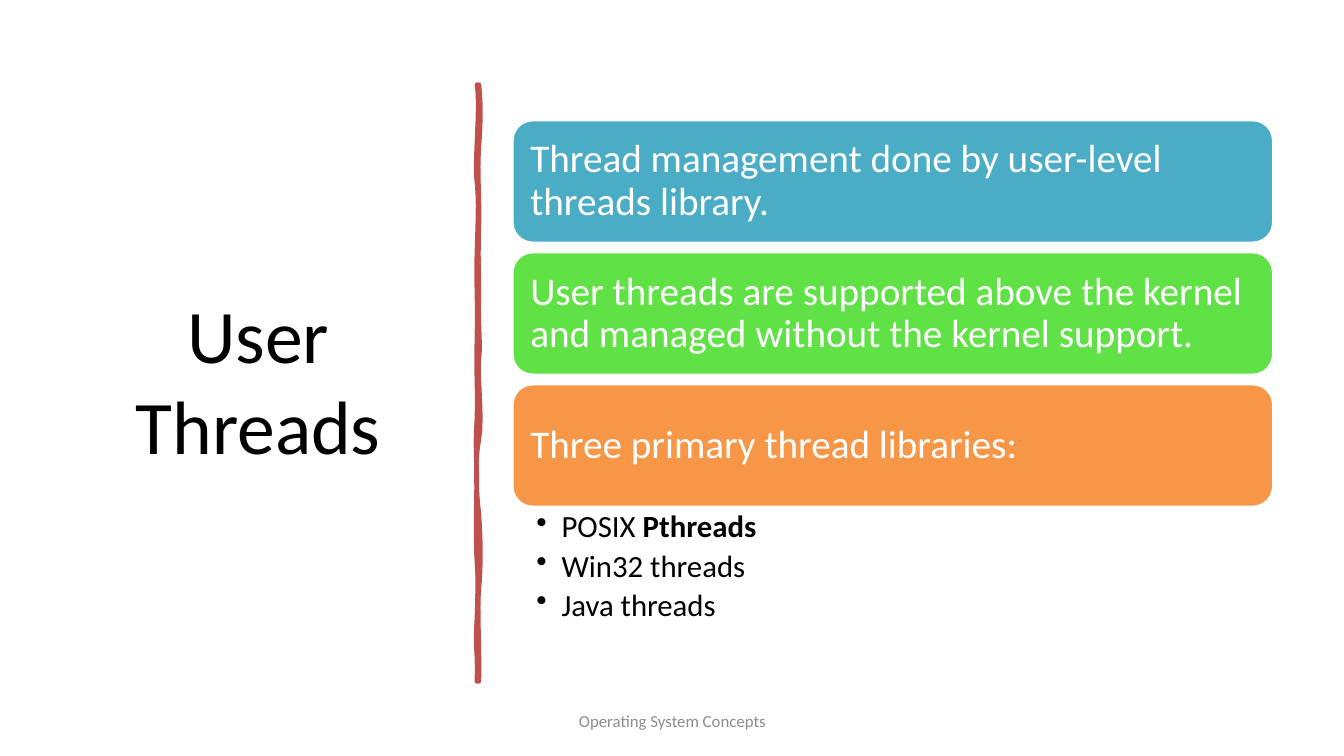
"""Build the slide on user threads with its three coloured statements."""
from lxml import etree
from pptx import Presentation, util as u
from pptx.dml.color import RGBColor
from pptx.enum import shapes, text

COLOURS = {"black": "000000", "white": "FFFFFF", "grey": "8C8C8C", "red": "C0504D",
           "blue": "4BACC6", "green": "60E146", "orange": "F79646"}


def colour(name):
    return RGBColor.from_string(COLOURS[name])


def write(box, paragraphs, size, shade="black", align=text.PP_ALIGN.LEFT,
          anchor=text.MSO_ANCHOR.MIDDLE, insets=(0.1, 0.05, 0.1, 0.05),
          spacing=1.0, after=0, bullet=None):
    frame = box.text_frame
    frame.word_wrap = True
    frame.vertical_anchor = anchor
    (frame.margin_left, frame.margin_top,
     frame.margin_right, frame.margin_bottom) = map(u.Inches, insets)
    for index, spans in enumerate(paragraphs):
        para = frame.add_paragraph() if index else frame.paragraphs[0]
        para.alignment = align
        para.line_spacing = spacing
        para.space_after = u.Pt(after)
        if bullet:
            props = para._p.get_or_add_pPr()
            props.set("marL", str(u.Inches(0.25)))
            props.set("indent", str(-u.Inches(0.25)))
            mark = etree.SubElement(props, "{http://schemas.openxmlformats.org/drawingml/2006/main}buChar")
            mark.set("char", bullet)
        for words, bold in spans:
            span = para.add_run()
            span.text = words
            span.font.name = "Calibri"
            span.font.size = u.Pt(size)
            span.font.bold = bold
            span.font.color.rgb = colour(shade)


deck = Presentation()
deck.slide_width, deck.slide_height = u.Inches(13.33), u.Inches(7.5)
page = deck.slides.add_slide(deck.slide_layouts[6])

title = page.shapes.add_textbox(*map(u.Inches, (0.69, 0.7, 3.74, 6.11)))
write(title, [[("User Threads", False)]], 54, align=text.PP_ALIGN.CENTER)

# Each stroke curve: first control x and y, second control x and y, end y.
RIGHT, LEFT, TOP, BOTTOM = 4.75, 4.73, 0.84, 6.76
right_side = [(4.77, 1.02, 4.77, 1.19, 1.46), (4.73, 1.73, 4.76, 1.95, 2.26),
              (4.74, 2.57, 4.75, 2.62, 2.94), (4.74, 3.25, 4.77, 3.42, 3.56),
              (4.73, 3.7, 4.79, 4.14, 4.36), (4.71, 4.57, 4.72, 4.84, 5.1),
              (4.77, 5.36, 4.77, 5.64, 5.84), (4.73, 6.03, 4.76, 6.5, BOTTOM)]
left_side = [(4.74, 6.46, 4.71, 6.44, 6.13), (4.74, 5.83, 4.74, 5.7, 5.57),
             (4.72, 5.44, 4.72, 4.95, 4.77), (4.73, 4.59, 4.71, 4.45, 4.15),
             (4.74, 3.86, 4.72, 3.73, 3.35), (4.74, 2.98, 4.72, 2.81, 2.5),
             (4.74, 2.18, 4.75, 2.0, 1.81), (4.7, 1.63, 4.77, 1.04, TOP)]
STEPS = 8
outline = []
for edge, start, curves in ((RIGHT, TOP, right_side), (LEFT, BOTTOM, left_side)):
    outline.append((u.Inches(edge), u.Inches(start)))
    for x1, y1, x2, y2, end in curves:
        for step in range(1, STEPS + 1):
            t = step / STEPS
            weights = ((1 - t) ** 3, 3 * t * (1 - t) ** 2, 3 * t ** 2 * (1 - t), t ** 3)
            outline.append(tuple(u.Inches(sum(w * v for w, v in zip(weights, values)))
                                 for values in ((edge, x1, x2, edge), (start, y1, y2, end))))
        start = end
builder = page.shapes.build_freeform(*outline[0])
builder.add_line_segments(outline[1:], close=True)
divider = builder.convert_to_shape()
divider.shadow.inherit = False
divider.fill.solid()
divider.fill.fore_color.rgb = colour("red")
divider.line.color.rgb = colour("red")
divider.line.width = u.Pt(3.25)

footer = page.shapes.add_textbox(*map(u.Inches, (4.42, 6.95, 4.5, 0.4)))
write(footer, [[("Operating System Concepts", False)]], 12, "grey", text.PP_ALIGN.CENTER)

COLUMN, WIDTH, FIRST_ROW, PITCH, HEIGHT = 5.08, 7.55, 1.19, 1.31, 1.22
statements = [("blue", "Thread management done by user-level threads library."),
              ("green", "User threads are supported above the kernel and managed without the kernel support."),
              ("orange", "Three primary thread libraries:")]
for row, (shade, words) in enumerate(statements):
    card = page.shapes.add_shape(
        shapes.MSO_SHAPE.ROUNDED_RECTANGLE,
        *map(u.Inches, (COLUMN, FIRST_ROW + row * PITCH, WIDTH, HEIGHT)))
    card.shadow.inherit = False
    card.fill.solid()
    card.fill.fore_color.rgb = colour(shade)
    card.line.color.rgb = colour("white")
    card.line.width = u.Pt(2)
    write(card, [[(words, False)]], 28, "white", insets=(0.12,) * 4, spacing=0.9)

libraries = page.shapes.add_textbox(*map(u.Inches, (COLUMN, 5.03, WIDTH, 1.24)))
write(libraries, [[("POSIX ", False), ("Pthreads", True)],
                  [("Win32 threads", False)], [("Java threads", False)]],
      22, anchor=text.MSO_ANCHOR.TOP, insets=(0.24, 0.04, 0.22, 0.04),
      spacing=0.9, after=4.4, bullet="•")

deck.save("out.pptx")
